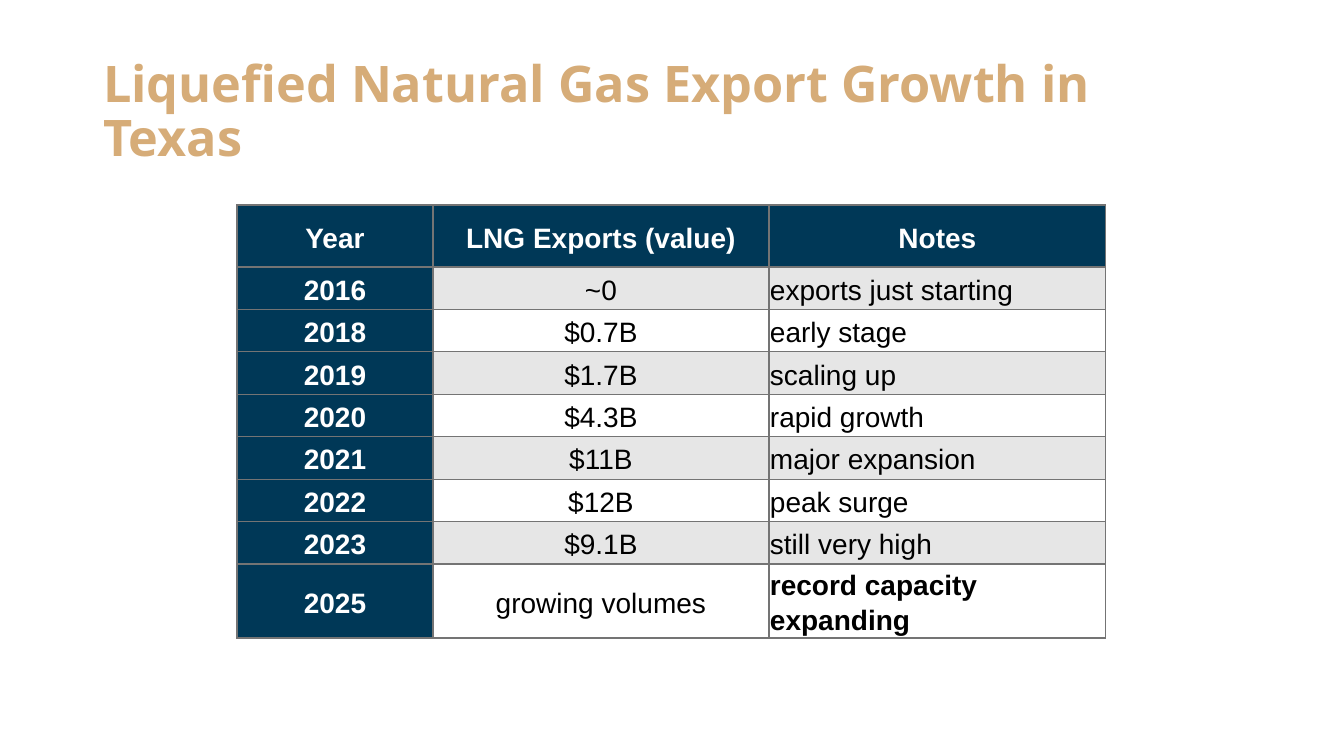
import pptx
import pptx.dml.color
import pptx.enum.text
import pptx.oxml
import pptx.util

PX = 914400 / 100.8
NAVY, GREY, WHITE, BLACK = "003857", "E6E6E6", "FFFFFF", "000000"
SAND, BORDER = "D6AC78", "747474"
LEFT = pptx.enum.text.PP_ALIGN.LEFT
CENTER = pptx.enum.text.PP_ALIGN.CENTER
MIDDLE = pptx.enum.text.MSO_ANCHOR.MIDDLE


def px(length):
    return pptx.util.Emu(round(length * PX))


def write(frame, text, font="Arial", size=20, color=BLACK, bold=False, align=LEFT, spacing=1.15):
    paragraph = frame.paragraphs[0]
    paragraph.alignment = align
    paragraph.line_spacing = spacing
    run = paragraph.add_run()
    run.text = text
    run.font.name = font
    run.font.size = pptx.util.Pt(size)
    run.font.bold = bold
    run.font.color.rgb = pptx.dml.color.RGBColor.from_string(color)


deck = pptx.Presentation()
deck.slide_width, deck.slide_height = px(1344), px(756)
slide = deck.slides.add_slide(deck.slide_layouts[5])

heading = slide.shapes.title
heading.left, heading.top, heading.width, heading.height = px(93), px(40), px(1159), px(146)
heading.text_frame.vertical_anchor = MIDDLE
write(heading.text_frame, "Liquefied Natural Gas Export Growth in Texas",
      font="Open Sans", size=36, color=SAND, bold=True, spacing=0.9)

export_rows = [
    ("Year", "LNG Exports (value)", "Notes"),
    ("2016", "~0", "exports just starting"),
    ("2018", "$0.7B", "early stage"),
    ("2019", "$1.7B", "scaling up"),
    ("2020", "$4.3B", "rapid growth"),
    ("2021", "$11B", "major expansion"),
    ("2022", "$12B", "peak surge"),
    ("2023", "$9.1B", "still very high"),
    ("2025", "growing volumes", "record capacity expanding"),
]
column_widths = [196, 336, 337]
last = len(export_rows) - 1
row_heights = [62] + [297 / 7] * (last - 1) + [74]

exports = slide.shapes.add_table(len(export_rows), len(column_widths), px(237), px(205),
                                 px(sum(column_widths)), px(sum(row_heights))).table
for column, width in zip(exports.columns, column_widths):
    column.width = px(width)

for r, values in enumerate(export_rows):
    exports.rows[r].height = px(row_heights[r])
    for c, value in enumerate(values):
        cell = exports.cell(r, c)
        is_header = r == 0 or c == 0
        cell.margin_left = cell.margin_right = cell.margin_top = cell.margin_bottom = px(1)
        cell.vertical_anchor = MIDDLE
        write(cell.text_frame, value, color=WHITE if is_header else BLACK,
              bold=is_header or (r == last and c == 2),
              align=CENTER if is_header or c == 1 else LEFT)
        for side in ("lnL", "lnR", "lnT", "lnB"):
            cell._tc.get_or_add_tcPr().append(pptx.oxml.parse_xml(
                f'<a:{side} xmlns:a="http://schemas.openxmlformats.org/drawingml/2006/main" w="12700">'
                f'<a:solidFill><a:srgbClr val="{BORDER}"/></a:solidFill></a:{side}>'))
        cell.fill.solid()
        cell.fill.fore_color.rgb = pptx.dml.color.RGBColor.from_string(
            NAVY if is_header else GREY if r % 2 else WHITE)

deck.save("out.pptx")
